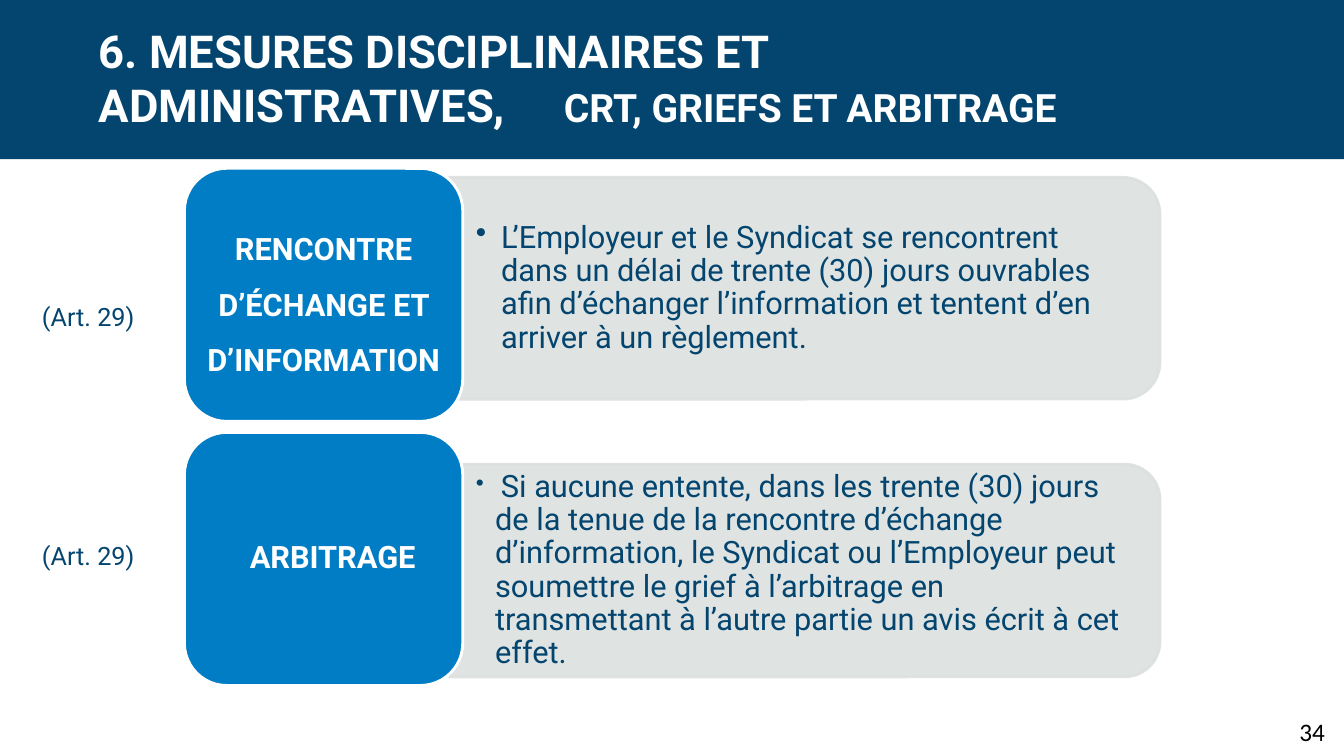
"""Build the slide on disciplinary measures, grievances and arbitration."""
from lxml.etree import SubElement
from pptx import Presentation
from pptx.dml.color import RGBColor
from pptx.enum.shapes import MSO_SHAPE
from pptx.enum.text import MSO_ANCHOR, MSO_AUTO_SIZE, PP_ALIGN
from pptx.oxml.ns import qn
from pptx.util import Inches, Pt

NAVY = RGBColor(0x04, 0x45, 0x6F)
BLUE = RGBColor(0x00, 0x7D, 0xC5)
GREY = RGBColor(0xDC, 0xE0, 0xDE)
WHITE = RGBColor(0xFF, 0xFF, 0xFF)
BLACK = RGBColor(0x00, 0x00, 0x00)

CARD_TOP, CARD_STEP = 1.67, 2.62
PANEL_LENGTH, PANEL_CENTER = 7.05, 7.98

STEPS = [
    {"label": "RENCONTRE D’ÉCHANGE ET D’INFORMATION", "spacing": 1.5,
     "shift": 0, "center": 2.86, "depth": 2.2, "indent": 0.25, "art": 2.94,
     "body": [("L’Employeur et le Syndicat se rencontrent dans un délai de "
               "trente (30) jours ouvrables afin d’échanger l’information et "
               "tentent d’en arriver à un règlement.", 22)]},
    {"label": "ARBITRAGE", "spacing": 0.9,
     "shift": 0.18, "center": 5.66, "depth": 2.11, "indent": 0.19, "art": 5.31,
     "body": [(" ", 17),
              ("Si aucune entente, dans les trente (30) jours de la tenue de "
               "la rencontre d’échange d’information, le Syndicat ou "
               "l’Employeur peut soumettre le grief à l’arbitrage en "
               "transmettant à l’autre partie un avis écrit à cet effet.", 22)]},
]


def add_run(p, text, size, color, bold=False, font="Roboto"):
    r = p.add_run()
    r.text = text
    r.font.name, r.font.size, r.font.bold = font, Pt(size), bold
    r.font.color.rgb = color


def set_margins(tf, x, y):
    tf.margin_left = tf.margin_right = Inches(x)
    tf.margin_top = tf.margin_bottom = Inches(y)


def add_shape(s, kind, left, top, width, height, fill, line=None):
    sp = s.shapes.add_shape(kind, Inches(left), Inches(top),
                            Inches(width), Inches(height))
    sp.shadow.inherit = False
    sp.fill.solid()
    sp.fill.fore_color.rgb = fill
    if line is None:
        sp.line.fill.background()
    else:
        sp.line.color.rgb = line
        sp.line.width = Pt(2)
    return sp


def add_text(s, left, top, width, height, wrap=True):
    tf = s.shapes.add_textbox(Inches(left), Inches(top),
                              Inches(width), Inches(height)).text_frame
    tf.word_wrap = wrap
    return tf


def add_title(s):
    title = s.shapes.title
    title.left, title.top = Inches(0.88), Inches(0.14)
    title.width, title.height = Inches(10.62), Inches(1.25)
    banner = add_shape(s, MSO_SHAPE.RECTANGLE, 0, 0, 13.33, 1.58, NAVY)
    title.element.addprevious(banner.element)
    tf = title.text_frame
    tf.word_wrap = True
    tf.auto_size = MSO_AUTO_SIZE.NONE
    tf.vertical_anchor = MSO_ANCHOR.MIDDLE
    p = tf.paragraphs[0]
    p.alignment = PP_ALIGN.LEFT
    add_run(p, "6. MESURES DISCIPLINAIRES ET ADMINISTRATIVES, \t ",
            32.4, WHITE, True)
    add_run(p, "CRT, GRIEFS ET ARBITRAGE", 27.9, WHITE, True)


def add_panel(s, step):
    depth, center = step["depth"], step["center"]
    sp = add_shape(s, MSO_SHAPE.ROUND_2_SAME_RECTANGLE,
                   PANEL_CENTER - depth / 2, center - PANEL_LENGTH / 2,
                   depth, PANEL_LENGTH, GREY, GREY)
    sp.rotation = 90
    for color in sp.element.spPr.iter(qn("a:srgbClr")):
        SubElement(color, qn("a:alpha"), val="90000")

    height = depth - 0.21
    tf = add_text(s, 4.45, center - height / 2, 6.95, height)
    tf.vertical_anchor = MSO_ANCHOR.MIDDLE
    set_margins(tf, 0.27, 0.14)
    p = tf.paragraphs[0]
    indent = Inches(step["indent"])
    pPr = p._p.get_or_add_pPr()
    pPr.set("marL", str(indent))
    pPr.set("indent", str(-indent))
    SubElement(pPr, qn("a:buChar"), char="•")
    p.line_spacing = 0.9
    for text, size in step["body"]:
        add_run(p, text, size, NAVY)


def add_card(s, step, top):
    sp = add_shape(s, MSO_SHAPE.ROUNDED_RECTANGLE, 1.83, top, 2.76, 2.51,
                   BLUE, WHITE)
    tf = sp.text_frame
    tf.word_wrap = True
    tf.vertical_anchor = MSO_ANCHOR.MIDDLE
    set_margins(tf, 0.09, 0.05)
    tf.margin_left = Inches(0.09 + step["shift"])
    p = tf.paragraphs[0]
    p.alignment = PP_ALIGN.CENTER
    p.line_spacing = step["spacing"]
    add_run(p, step["label"], 22, WHITE, True)


def add_article(s, top):
    p = add_text(s, 0.29, top, 1.17, 0.4, wrap=False).paragraphs[0]
    p.alignment = PP_ALIGN.CENTER
    add_run(p, "(Art. 29)", 18, NAVY)


def add_page_number(s):
    p = add_text(s, 10.13, 7.06, 3.11, 0.4).paragraphs[0]
    p.alignment = PP_ALIGN.RIGHT
    add_run(p, "34", 18, BLACK, font="Calibri")


def main():
    prs = Presentation()
    prs.slide_width, prs.slide_height = Inches(13.33), Inches(7.5)
    s = prs.slides.add_slide(prs.slide_layouts[5])
    add_title(s)
    add_page_number(s)
    for i, step in enumerate(STEPS):
        add_panel(s, step)
        add_card(s, step, CARD_TOP + i * CARD_STEP)
        add_article(s, step["art"])
    prs.save("out.pptx")


if __name__ == "__main__":
    main()
